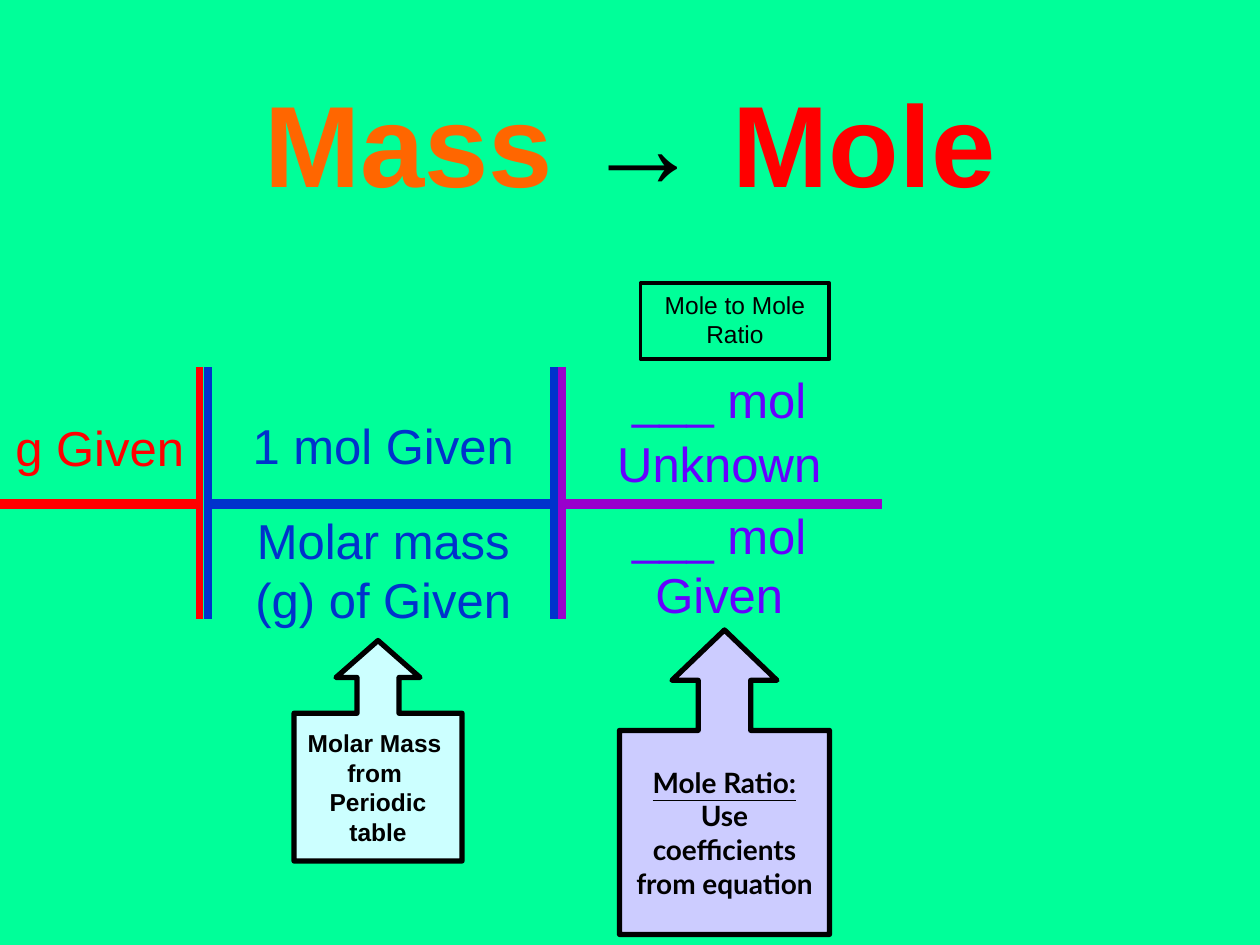
from dataclasses import dataclass

from lxml import etree
from pptx import Presentation
from pptx.dml.color import RGBColor
from pptx.enum.shapes import MSO_CONNECTOR, MSO_SHAPE
from pptx.enum.text import MSO_ANCHOR, MSO_AUTO_SIZE, PP_ALIGN
from pptx.oxml.ns import qn
from pptx.util import Inches, Pt

STRAIGHT = MSO_CONNECTOR.STRAIGHT
RECTANGLE = MSO_SHAPE.RECTANGLE
UP_CALLOUT = MSO_SHAPE.UP_ARROW_CALLOUT
MIDDLE, TOP = MSO_ANCHOR.MIDDLE, MSO_ANCHOR.TOP
FIXED_SIZE = MSO_AUTO_SIZE.NONE
CENTER = PP_ALIGN.CENTER
COLUMNS, ROWS = 120, 90


@dataclass(frozen=True)
class Theme:
    background: str = "00FF99"
    ink: str = "000000"
    mass: str = "FF6600"
    given: str = "FF0000"
    molar: str = "0033CC"
    ratio_line: str = "9900CC"
    ratio_text: str = "6600FF"
    molar_note: str = "CCFFFF"
    ratio_note: str = "CCCCFF"
    font: str = "Arial"
    note_font: str = "Lato"
    title_size: float = 66
    body_size: float = 28
    ratio_note_size: float = 16
    label_size: float = 14
    bar: float = 6
    divider: float = 4.5
    callout_line: float = 3
    label_line: float = 2.25


class SlideBuilder:
    """Places elements on a grid of 120 columns and 90 rows."""

    def __init__(self, deck, theme):
        self.theme = theme
        self.cell_width = deck.slide_width / COLUMNS
        self.cell_height = deck.slide_height / ROWS
        self.slide = deck.slides.add_slide(deck.slide_layouts[5])
        fill = self.slide.background.fill
        fill.solid()
        fill.fore_color.rgb = RGBColor.from_string(theme.background)

    def place(self, column, row, width, height):
        return (round(column * self.cell_width), round(row * self.cell_height),
                round(width * self.cell_width), round(height * self.cell_height))

    def set_text(self, frame, paragraphs, size, font=None, bold=False,
                 anchor=TOP, wrap=True, spacing=None):
        """Each paragraph is a list of (text, colour, underline) runs."""
        frame.auto_size = FIXED_SIZE
        frame.word_wrap = wrap
        frame.vertical_anchor = anchor
        for index, runs in enumerate(paragraphs):
            paragraph = frame.add_paragraph() if index else frame.paragraphs[0]
            paragraph.alignment = CENTER
            if spacing:
                paragraph.line_spacing = spacing
            for text, color, underline in runs:
                run = paragraph.add_run()
                run.text = text
                run.font.name = font or self.theme.font
                run.font.size = Pt(size)
                run.font.bold = bold
                run.font.underline = underline
                run.font.color.rgb = RGBColor.from_string(color)

    def title(self, box, runs):
        heading = self.slide.shapes.title
        heading.left, heading.top, heading.width, heading.height = self.place(*box)
        self.set_text(heading.text_frame, [runs], self.theme.title_size,
                      bold=True, anchor=MIDDLE)

    def text(self, box, words, color, spacing=None):
        frame = self.slide.shapes.add_textbox(*self.place(*box)).text_frame
        self.set_text(frame, [[(words, color, False)]], self.theme.body_size,
                      spacing=spacing)

    def panel(self, kind, box, fill, line_width, paragraphs, size, **style):
        shape = self.slide.shapes.add_shape(kind, *self.place(*box))
        shape.shadow.inherit = False
        if fill:
            shape.fill.solid()
            shape.fill.fore_color.rgb = RGBColor.from_string(fill)
        else:
            shape.fill.background()
        shape.line.color.rgb = RGBColor.from_string(self.theme.ink)
        shape.line.width = Pt(line_width)
        self.set_text(shape.text_frame, paragraphs, size, **style)
        return shape

    def callout(self, box, fill, head, paragraphs, size, **style):
        shape = self.panel(UP_CALLOUT, box, fill, self.theme.callout_line,
                           paragraphs, size, bold=True, anchor=MIDDLE, **style)
        for index, share in enumerate((0.25, 0.25, head, 0.67)):
            shape.adjustments[index] = share

    def line(self, column, row, width, height, color, weight):
        left, top, across, down = self.place(column, row, width, height)
        connector = self.slide.shapes.add_connector(
            STRAIGHT, left, top, left + across, top + down)
        connector.line.color.rgb = RGBColor.from_string(color)
        connector.line.width = Pt(weight)
        etree.SubElement(connector._element.spPr, qn("a:effectLst"))

    def bar(self, start, end, color):
        self.line(start, 48, end - start, 0, color, self.theme.bar)

    def divider(self, column, color):
        self.line(column, 35, 0, 24, color, self.theme.divider)


def main():
    theme = Theme()
    deck = Presentation()
    deck.slide_width, deck.slide_height = Inches(10), Inches(7.5)
    page = SlideBuilder(deck, theme)

    page.title((0, 1, 120, 25), [("Mass ", theme.mass, False),
                                 ("→ ", theme.ink, False),
                                 ("Mole", theme.given, False)])

    molar_lines = ("Molar Mass ", "from ", "Periodic", "table")
    page.callout((28, 61, 16, 21), theme.molar_note, 0.22,
                 [[(words, theme.ink, False)] for words in molar_lines],
                 theme.label_size, wrap=False)

    page.bar(0, 19, theme.given)
    page.divider(19, theme.given)
    page.divider(52.8, theme.molar)
    page.bar(20, 53, theme.molar)
    page.bar(53.8, 84, theme.ratio_line)
    page.divider(53.5, theme.ratio_line)
    page.divider(19.8, theme.molar)

    page.panel(RECTANGLE, (61, 27, 18, 7.2), None, theme.label_line,
               [[("Mole to Mole Ratio", theme.ink, False)]], theme.label_size)

    page.text((22, 39, 29, 6.8), "1 mol Given", theme.molar)
    page.text((54, 34, 29, 13.6), "___ mol Unknown", theme.ratio_text, spacing=1.1)
    page.text((55, 47.6, 27, 12.4), "___ mol Given", theme.ratio_text)
    page.text((21, 48, 31, 12.4), "Molar mass (g) of Given", theme.molar)
    page.text((0, 39.2, 19, 6.8), "g Given", theme.given)

    page.callout((59, 60, 20, 29), theme.ratio_note, 0.24,
                 [[("Mole Ratio:", theme.ink, True),
                   (" Use coefficients from equation", theme.ink, False)]],
                 theme.ratio_note_size, font=theme.note_font)

    deck.save("out.pptx")


if __name__ == "__main__":
    main()
